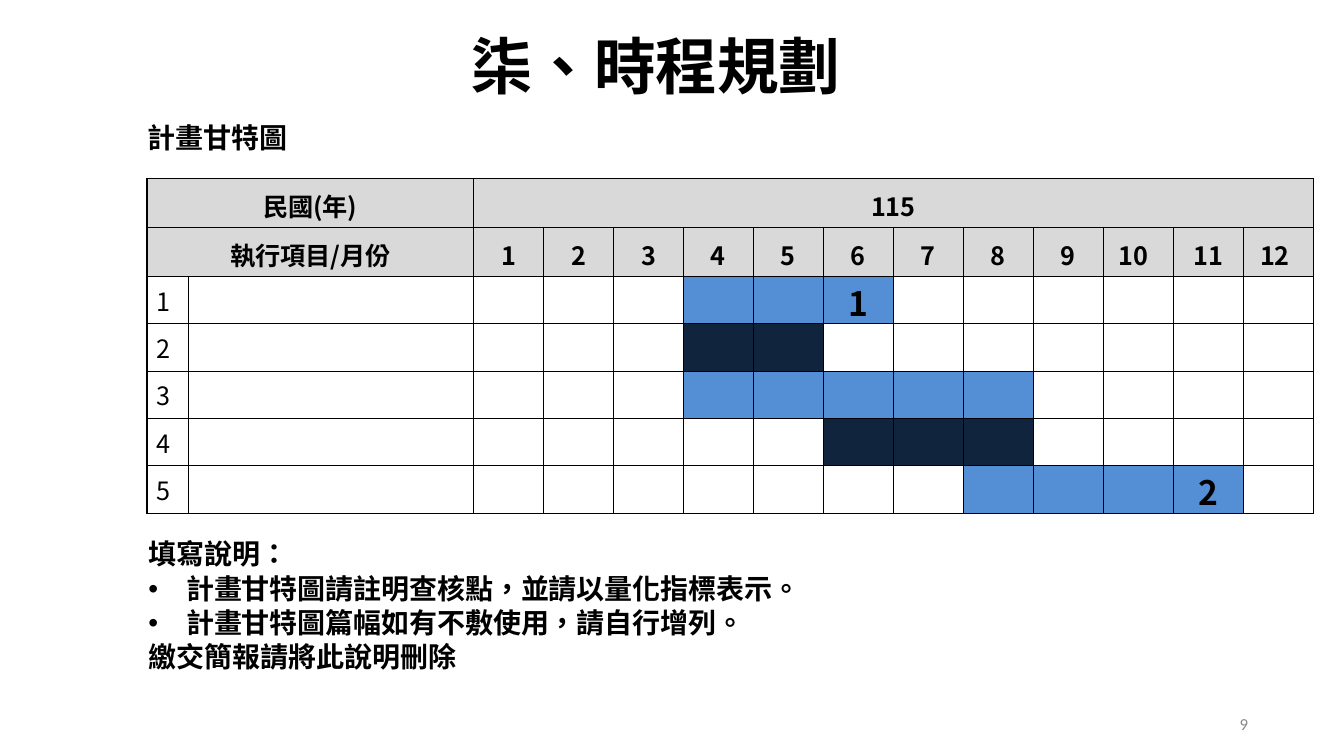
from lxml.etree import SubElement
from pptx import Presentation
from pptx.dml.color import RGBColor
from pptx.enum.lang import MSO_LANGUAGE_ID
from pptx.enum.text import MSO_ANCHOR, MSO_AUTO_SIZE, PP_ALIGN
from pptx.oxml.ns import qn
from pptx.util import Pt

BLACK = RGBColor(0x00, 0x00, 0x00)
GRAY = RGBColor(0x88, 0x88, 0x88)
HEADER = RGBColor(0xD9, 0xD9, 0xD9)
BLUE = RGBColor(0x54, 0x8E, 0xD4)
NAVY = RGBColor(0x10, 0x24, 0x3E)
CJK = "Noto Sans CJK SC"
LATIN = "Calibri"

TASKS = [(4, 6, BLUE, "1"), (4, 5, NAVY, ""), (4, 8, BLUE, ""),
         (6, 8, NAVY, ""), (8, 11, BLUE, "2")]
NOTES = [("填寫說明：", False, 0),
         ("計畫甘特圖請註明查核點，並請以量化指標表示。", True, 1),
         ("計畫甘特圖篇幅如有不敷使用，請自行增列。", True, 0.2),
         ("繳交簡報請將此說明刪除", False, 0.2)]


class Deck:
    """Holds the text style and the current slide, and adds elements to it."""

    def __init__(self, prs):
        self.s = prs.slides.add_slide(prs.slide_layouts[1])
        self.base = {"name": CJK, "size": Pt(18), "bold": True,
                     "language_id": MSO_LANGUAGE_ID.TRADITIONAL_CHINESE}

    def run(self, p, text, color=BLACK, spacing=-0.1, **style):
        """Add one formatted run to a paragraph."""
        r = p.add_run()
        r.text = text
        for key, value in {**self.base, **style}.items():
            setattr(r.font, key, value)
        r.font.color.rgb = color
        rPr = r._r.get_or_add_rPr()
        rPr.set("spc", str(round(spacing * 100)))
        SubElement(rPr, qn("a:ea")).set("typeface", CJK)

    def frame(self, sp, left, top, width, height, inset=0):
        """Place a text shape and clear its margins."""
        box = {"left": left, "top": top, "width": width, "height": height}
        for key, value in box.items():
            setattr(sp, key, Pt(value))
        tf = sp.text_frame
        form = {"margin_left": 0, "margin_right": 0, "margin_top": Pt(inset),
                "margin_bottom": 0, "word_wrap": True,
                "vertical_anchor": MSO_ANCHOR.TOP,
                "auto_size": MSO_AUTO_SIZE.SHAPE_TO_FIT_TEXT}
        for key, value in form.items():
            setattr(tf, key, value)
        return tf

    def title(self, text, *box):
        """Fill the title placeholder."""
        p = self.frame(self.s.shapes.title, *box, inset=1).paragraphs[0]
        p.alignment = PP_ALIGN.LEFT
        self.run(p, text, size=Pt(44))

    def label(self, text, *box, **style):
        """Add a one-line text box."""
        sp = self.s.shapes.add_textbox(0, 0, 0, 0)
        p = self.frame(sp, *box, inset=1).paragraphs[0]
        self.run(p, text, **style)

    def notes(self, items, *box):
        """Fill the body placeholder with plain and bulleted lines."""
        tf = self.frame(self.s.placeholders[1], *box, inset=1)
        for i, (text, bulleted, before) in enumerate(items):
            p = tf.add_paragraph() if i else tf.paragraphs[0]
            p.space_before = Pt(before)
            pPr = p._p.get_or_add_pPr()
            pPr.set("marL", str(Pt(28 if bulleted else 1)))
            pPr.set("indent", str(Pt(-27 if bulleted else 0)))
            if bulleted:
                SubElement(pPr, qn("a:buFont")).set("typeface", "Arial")
                SubElement(pPr, qn("a:buChar")).set("char", "•")
            else:
                SubElement(pPr, qn("a:buNone"))
            self.run(p, text, size=Pt(20), name=CJK if bulleted else LATIN,
                     spacing=-0.1 if bulleted else 0)

    def table(self, left, top, widths, heights):
        """Add a plain table with black borders."""
        sp = self.s.shapes.add_table(len(heights), len(widths), Pt(left), Pt(top),
                                     Pt(sum(widths)), Pt(sum(heights)))
        table = sp.table
        table.first_row = table.horz_banding = False
        for column, width in zip(table.columns, widths):
            column.width = Pt(width)
        for row, height in zip(table.rows, heights):
            row.height = Pt(height)
        for cell in table.iter_cells():
            for side in ("left", "right", "top", "bottom"):
                setattr(cell, f"margin_{side}", 0)
            tcPr = cell._tc.get_or_add_tcPr()
            for edge in ("a:lnL", "a:lnR", "a:lnT", "a:lnB"):
                ln = SubElement(tcPr, qn(edge), w=str(Pt(1)))
                fill = SubElement(ln, qn("a:solidFill"))
                SubElement(fill, qn("a:srgbClr")).set("val", str(BLACK))
            cell.fill.background()
        return table

    def cell(self, cell, text, inset, align=PP_ALIGN.CENTER, **style):
        """Put text into a table cell."""
        cell.margin_top = Pt(inset)
        p = cell.text_frame.paragraphs[0]
        p.alignment = align
        self.run(p, text, **style)

    def gantt(self, year, tasks, left, top):
        """Draw the schedule with one row per task and one column per month."""
        table = self.table(left, top, [29.5, 203.8] + [50] * 12,
                           [35] * 2 + [33.84] * len(tasks))
        for row in (0, 1):
            table.cell(row, 0).merge(table.cell(row, 1))
        table.cell(0, 2).merge(table.cell(0, 13))
        heads = {(0, 0): "民國(年)", (0, 2): year, (1, 0): "執行項目/月份"}
        heads.update({(1, m + 1): str(m) for m in range(1, 13)})
        for (row, col), text in heads.items():
            cell = table.cell(row, col)
            cell.fill.solid()
            cell.fill.fore_color.rgb = HEADER
            shifted = text in ("10", "12")
            cell.margin_left = Pt({"10": 10.8, "12": 12.2}.get(text, 0))
            self.cell(cell, text, 6.5,
                      PP_ALIGN.LEFT if shifted else PP_ALIGN.CENTER)
        for row, (start, end, color, check) in enumerate(tasks, 2):
            number = table.cell(row, 0)
            number.margin_left = Pt(6.5)
            number.vertical_anchor = MSO_ANCHOR.MIDDLE
            self.cell(number, str(row - 1), 0, PP_ALIGN.LEFT, bold=False, spacing=0)
            for month in range(start, end + 1):
                bar = table.cell(row, month + 1)
                bar.fill.solid()
                bar.fill.fore_color.rgb = color
            if check:
                self.cell(bar, check, 0.7, size=Pt(24), spacing=-0.5)


def main():
    """Build the schedule slide."""
    prs = Presentation()
    prs.slide_width, prs.slide_height = Pt(960), Pt(540)
    deck = Deck(prs)
    deck.title("柒、時程規劃", 336.5, 19, 594, 54)
    deck.label("計畫甘特圖", 105.5, 85, 142.5, 26, size=Pt(20))
    deck.gantt("115", TASKS, 105, 127.5)
    deck.notes(NOTES, 105, 382.5, 623, 99)
    deck.label("9", 885.5, 508.5, 23, 12.5, size=Pt(12), color=GRAY,
               name=LATIN, bold=False, spacing=-0.2)
    prs.save("out.pptx")


if __name__ == "__main__":
    main()
